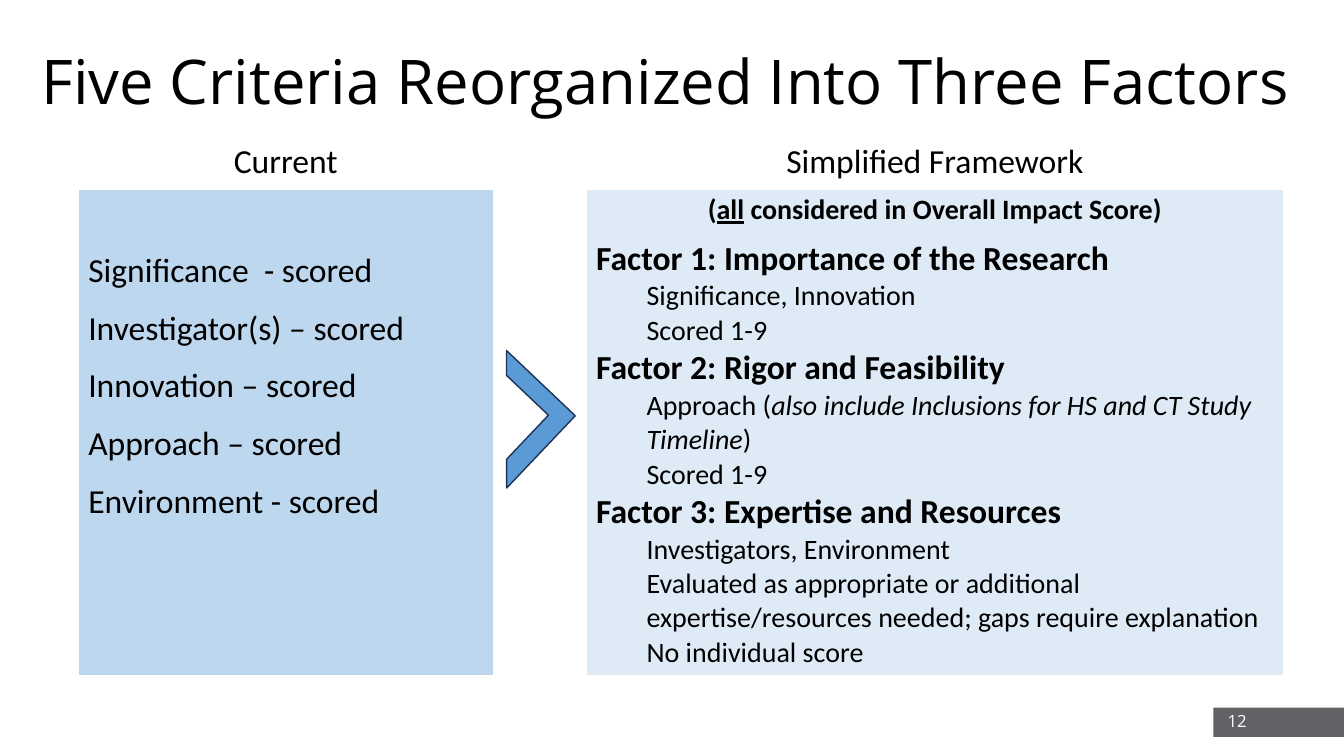
from dataclasses import dataclass

from lxml.etree import SubElement
from pptx import Presentation
from pptx.dml.color import RGBColor
from pptx.enum.shapes import MSO_SHAPE
from pptx.enum.text import MSO_ANCHOR, PP_ALIGN
from pptx.oxml.ns import qn
from pptx.shapes.autoshape import Shape
from pptx.slide import Slide
from pptx.table import _Cell
from pptx.text.text import TextFrame, _Paragraph
from pptx.util import Cm, Pt


@dataclass(frozen=True)
class Theme:
    title_font: str = "Open Sans"
    body_font: str = "Calibri"
    black: str = "000000"
    white: str = "FFFFFF"
    footer_gray: str = "616265"
    current_blue: str = "BDD7EE"
    framework_blue: str = "DEEBF7"
    arrow_blue: str = "5B9BD5"
    arrow_outline: str = "1E3256"
    title_size: int = 44
    heading_size: int = 24
    detail_size: int = 20
    number_size: int = 12


THEME = Theme()


@dataclass(frozen=True)
class Span:
    text: str
    bold: bool = False
    italic: bool = False
    underline: bool = False


@dataclass(frozen=True)
class Line:
    spans: tuple[Span, ...]
    size: int = THEME.heading_size
    font: str = THEME.body_font
    color: str = THEME.black
    align: PP_ALIGN = PP_ALIGN.LEFT
    before: int = 0
    after: int = 0
    spacing: float = 1.0
    indent: float = 0


@dataclass(frozen=True)
class Factor:
    name: str
    details: tuple[tuple[Span, ...], ...]


@dataclass(frozen=True)
class Box:
    left: float
    top: float
    width: float
    height: float

    def lengths(self) -> tuple[Cm, Cm, Cm, Cm]:
        return Cm(self.left), Cm(self.top), Cm(self.width), Cm(self.height)


CRITERIA = (
    "Significance  - scored",
    "Investigator(s) – scored",
    "Innovation – scored",
    "Approach – scored",
    "Environment - scored",
)
FACTORS = (
    Factor("Factor 1: Importance of the Research", (
        (Span("Significance, Innovation"),),
        (Span("Scored 1-9"),),
    )),
    Factor("Factor 2: Rigor and Feasibility", (
        (
            Span("Approach ("),
            Span("also include Inclusions for HS and CT Study Timeline", italic=True),
            Span(")"),
        ),
        (Span("Scored 1-9"),),
    )),
    Factor("Factor 3: Expertise and Resources", (
        (Span("Investigators, Environment"),),
        (Span("Evaluated as appropriate or additional expertise/resources needed; "
              "gaps require explanation"),),
        (Span("No individual score"),),
    )),
)
OVERALL_NOTE = Line(
    (
        Span("(", bold=True),
        Span("all", bold=True, underline=True),
        Span(" considered in Overall Impact Score)", bold=True),
    ),
    size=THEME.detail_size, align=PP_ALIGN.CENTER, after=8,
)
COLUMN_WIDTHS = (10.46, 2.34, 17.58)
ROW_HEIGHTS = (1.3, 12.29)


def format_paragraph(paragraph: _Paragraph, line: Line) -> None:
    paragraph.alignment = line.align
    paragraph.space_before = Pt(line.before)
    paragraph.space_after = Pt(line.after)
    paragraph.line_spacing = line.spacing
    if line.indent:
        properties = paragraph._p.get_or_add_pPr()
        properties.set("marL", str(Cm(line.indent)))
        properties.set("indent", "0")
    for span in line.spans:
        run = paragraph.add_run()
        run.text = span.text
        run.font.name = line.font
        run.font.size = Pt(line.size)
        run.font.color.rgb = RGBColor.from_string(line.color)
        run.font.bold = span.bold
        run.font.italic = span.italic
        run.font.underline = span.underline


def write_lines(frame: TextFrame, lines: list[Line]) -> None:
    for index, line in enumerate(lines):
        paragraph = frame.add_paragraph() if index else frame.paragraphs[0]
        format_paragraph(paragraph, line)


def add_text(slide: Slide, box: Box, line: Line) -> None:
    frame = slide.shapes.add_textbox(*box.lengths()).text_frame
    frame.word_wrap = True
    frame.vertical_anchor = MSO_ANCHOR.MIDDLE
    write_lines(frame, [line])


def add_filled_shape(slide: Slide, kind: MSO_SHAPE, box: Box, color: str) -> Shape:
    shape = slide.shapes.add_shape(kind, *box.lengths())
    shape.shadow.inherit = False
    shape.fill.solid()
    shape.fill.fore_color.rgb = RGBColor.from_string(color)
    shape.line.fill.background()
    return shape


def style_cell(cell: _Cell, color: str, bottom_width: int) -> None:
    properties = cell._tc.get_or_add_tcPr()
    for side in ("lnL", "lnR", "lnT", "lnB"):
        width = bottom_width if side == "lnB" else 1
        border = SubElement(properties, qn(f"a:{side}"), w=str(Pt(width)))
        fill = SubElement(border, qn("a:solidFill"))
        SubElement(fill, qn("a:srgbClr"), val=THEME.white)
    cell.fill.solid()
    cell.fill.fore_color.rgb = RGBColor.from_string(color)


def framework_lines() -> list[Line]:
    lines = [OVERALL_NOTE]
    for factor in FACTORS:
        lines.append(Line((Span(factor.name, bold=True),)))
        lines.extend(Line(spans, size=THEME.detail_size, indent=1.27)
                     for spans in factor.details)
    return lines


def add_comparison(slide: Slide) -> None:
    box = Box(1.97, 3.43, sum(COLUMN_WIDTHS), sum(ROW_HEIGHTS))
    table = slide.shapes.add_table(2, 3, *box.lengths()).table
    table.first_row = False
    table.horz_banding = False
    for column, width in zip(table.columns, COLUMN_WIDTHS):
        column.width = Cm(width)
    for row, height in zip(table.rows, ROW_HEIGHTS):
        row.height = Cm(height)
    body_colors = (THEME.current_blue, THEME.white, THEME.framework_blue)
    for index, color in enumerate(body_colors):
        style_cell(table.cell(0, index), THEME.white, 3)
        style_cell(table.cell(1, index), color, 1)
    for index, heading in ((0, "Current"), (2, "Simplified Framework")):
        write_lines(table.cell(0, index).text_frame,
                    [Line((Span(heading),), align=PP_ALIGN.CENTER)])
    current = table.cell(1, 0)
    current.margin_top = Cm(1.58)
    write_lines(current.text_frame, [
        Line((Span(text),), before=12 if index else 0)
        for index, text in enumerate(CRITERIA)
    ])
    write_lines(table.cell(1, 2).text_frame, framework_lines())


def add_arrow(slide: Slide) -> None:
    arrow = add_filled_shape(slide, MSO_SHAPE.HALF_FRAME,
                             Box(11.51, 9.37, 2.51, 2.39), THEME.arrow_blue)
    arrow.rotation = 133.5
    arrow.adjustments[0] = 0.21
    arrow.adjustments[1] = 0.19
    arrow.line.color.rgb = RGBColor.from_string(THEME.arrow_outline)
    arrow.line.width = Pt(1)


def main() -> None:
    presentation = Presentation()
    presentation.slide_width = Cm(33.87)
    presentation.slide_height = Cm(19.05)
    slide = presentation.slides.add_slide(presentation.slide_layouts[6])
    add_filled_shape(slide, MSO_SHAPE.RECTANGLE, Box(30.58, 17.83, 3.29, 0.74), THEME.footer_gray)
    add_text(slide, Box(24.05, 17.65, 7.62, 1.02),
             Line((Span("12"),), THEME.number_size, THEME.title_font, THEME.white, PP_ALIGN.RIGHT))
    add_text(slide, Box(0.79, 0.28, 33.07, 3.68),
             Line((Span("Five Criteria Reorganized Into Three Factors"),),
                  THEME.title_size, THEME.title_font, spacing=0.9))
    add_comparison(slide)
    add_arrow(slide)
    presentation.save("out.pptx")


if __name__ == "__main__":
    main()
